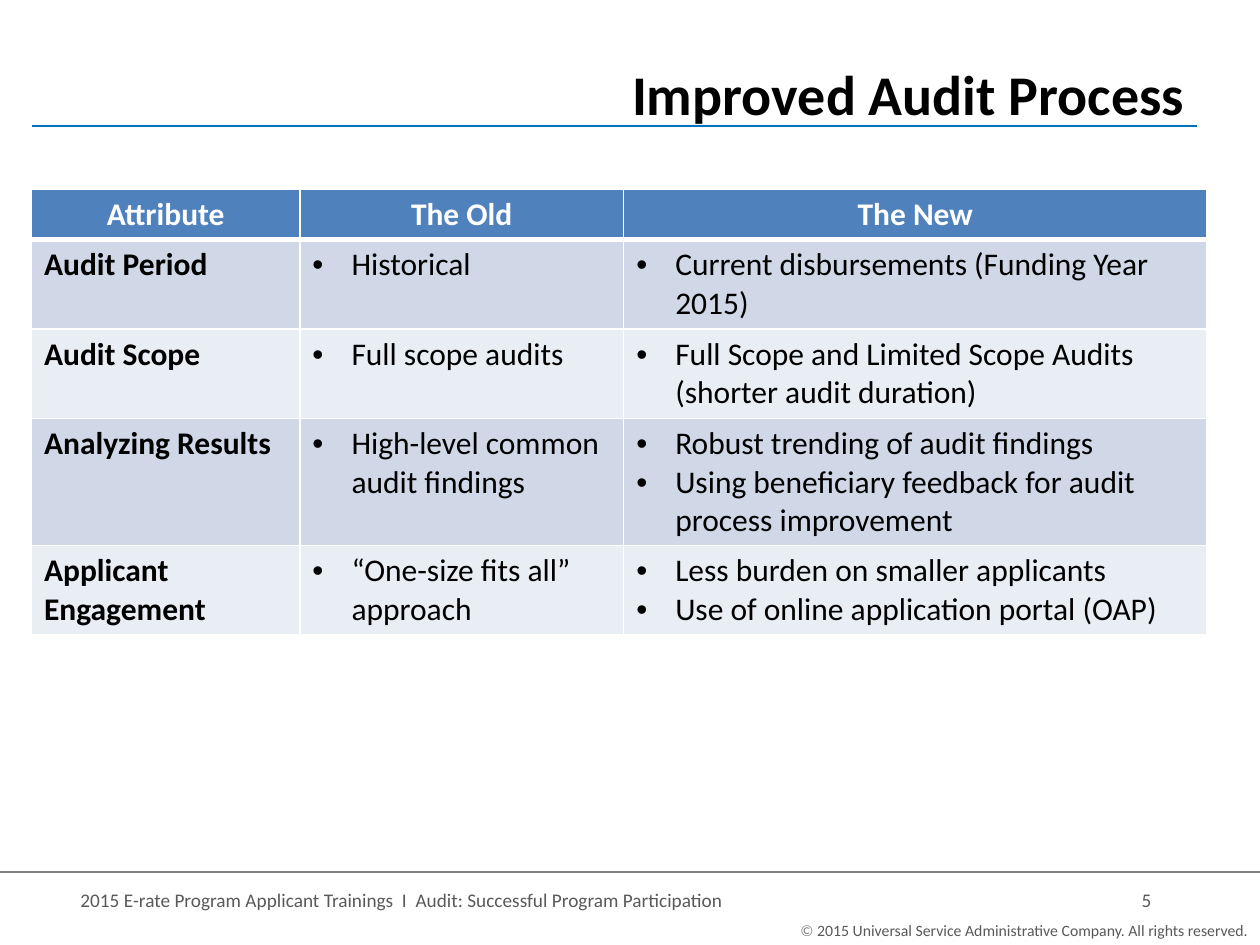
import pptx
import pptx.dml.color
import pptx.enum.shapes
import pptx.enum.text
import pptx.oxml
import pptx.oxml.ns
import pptx.util

RGBColor = pptx.dml.color.RGBColor
ALIGN = pptx.enum.text.PP_ALIGN
BLACK = RGBColor(0x00, 0x00, 0x00)
WHITE = RGBColor(0xFF, 0xFF, 0xFF)
GRAY = RGBColor(0x80, 0x80, 0x80)
DARK_GRAY = RGBColor(0x59, 0x59, 0x59)
RULE_BLUE = RGBColor(0x00, 0x70, 0xC0)
HEADER_BLUE = RGBColor(0x4F, 0x81, 0xBD)
BANDS = (RGBColor(0xD0, 0xD8, 0xE8), RGBColor(0xE9, 0xED, 0xF4))

HEADINGS = ("Attribute", "The Old", "The New")
COMPARISON = (
    ("Audit Period", ["Historical"], ["Current disbursements (Funding Year 2015)"]),
    ("Audit Scope", ["Full scope audits"],
     ["Full Scope and Limited Scope Audits (shorter audit duration)"]),
    ("Analyzing Results", ["High-level common audit findings"],
     ["Robust trending of audit findings",
      "Using beneficiary feedback for audit process improvement"]),
    ("Applicant Engagement", ["“One-size fits all” approach"],
     ["Less burden on smaller applicants",
      "Use of online application portal (OAP)"]),
)
COLUMN_WIDTHS = (8.52, 10.28, 18.52)
ROW_HEIGHTS = (1.6, 2.84, 2.84, 4.04, 2.84)


class SlideBuilder:
    """Draws styled elements on one slide, measured on a 40 by 30 grid."""

    font_name = "Calibri"
    columns, rows = 40, 30

    def __init__(self, presentation):
        self.column = presentation.slide_width / self.columns
        self.row = presentation.slide_height / self.rows
        self.slide = presentation.slides.add_slide(presentation.slide_layouts[6])

    def across(self, count):
        return pptx.util.Emu(round(count * self.column))

    def down(self, count):
        return pptx.util.Emu(round(count * self.row))

    def box(self, left, top, width, height):
        return self.across(left), self.down(top), self.across(width), self.down(height)

    def add_run(self, paragraph, text, size, color, bold=False):
        run = paragraph.add_run()
        run.text = text
        run.font.name = self.font_name
        run.font.size = pptx.util.Pt(size)
        run.font.bold = bold
        run.font.color.rgb = color

    def add_text(self, place, runs, size, align=ALIGN.LEFT, bold=False, tab=None):
        frame = self.slide.shapes.add_textbox(*self.box(*place)).text_frame
        frame.word_wrap = True
        paragraph = frame.paragraphs[0]
        paragraph.alignment = align
        if tab is not None:
            properties = paragraph._p.get_or_add_pPr()
            tabs = pptx.oxml.parse_xml(
                f'<a:tabLst {pptx.oxml.ns.nsdecls("a")}>'
                f'<a:tab pos="{self.across(tab)}" algn="r"/></a:tabLst>')
            properties.append(tabs)
        for text, color in runs:
            self.add_run(paragraph, text, size, color, bold)

    def add_rule(self, left, right, top, color, width):
        rule = self.slide.shapes.add_connector(
            pptx.enum.shapes.MSO_CONNECTOR.STRAIGHT,
            self.across(left), self.down(top), self.across(right), self.down(top))
        rule.line.color.rgb = color
        rule.line.width = pptx.util.Pt(width)
        rule._element.spPr.append(pptx.oxml.parse_xml(
            f'<a:effectLst {pptx.oxml.ns.nsdecls("a")}/>'))

    def add_bullet(self, paragraph):
        properties = paragraph._p.get_or_add_pPr()
        indent = pptx.util.Inches(0.31)
        properties.set("marL", str(indent))
        properties.set("indent", str(-indent))
        for content in ('buFont {} typeface="Arial"', 'buChar {} char="•"'):
            element = content.format(pptx.oxml.ns.nsdecls("a"))
            properties.append(pptx.oxml.parse_xml(f"<a:{element}/>"))

    def fill_cell(self, cell, lines, fill, color, align=ALIGN.LEFT, bold=False,
                  bullets=False, top=1, bottom=1):
        properties = cell._tc.get_or_add_tcPr()
        for side, width in (("L", 1), ("R", 1), ("T", top), ("B", bottom)):
            properties.append(pptx.oxml.parse_xml(
                f'<a:ln{side} {pptx.oxml.ns.nsdecls("a")} w="{pptx.util.Pt(width)}">'
                f'<a:solidFill><a:srgbClr val="{WHITE}"/></a:solidFill></a:ln{side}>'))
        cell.fill.solid()
        cell.fill.fore_color.rgb = fill
        frame = cell.text_frame
        for index, line in enumerate(lines):
            paragraph = frame.add_paragraph() if index else frame.paragraphs[0]
            paragraph.alignment = align
            if bullets:
                self.add_bullet(paragraph)
            self.add_run(paragraph, line, 18, color, bold)

    def add_comparison(self, left, top, headings, records, widths, heights):
        table = self.slide.shapes.add_table(
            len(heights), len(widths),
            *self.box(left, top, sum(widths), sum(heights))).table
        table.horz_banding = False
        for column, width in zip(table.columns, widths):
            column.width = self.across(width)
        for row, height in zip(table.rows, heights):
            row.height = self.down(height)
        for index, heading in enumerate(headings):
            self.fill_cell(table.cell(0, index), [heading], HEADER_BLUE, WHITE,
                           ALIGN.CENTER, bold=True, bottom=3)
        for number, (attribute, *details) in enumerate(records, start=1):
            band = BANDS[(number - 1) % len(BANDS)]
            edge = 3 if number == 1 else 1
            self.fill_cell(table.cell(number, 0), [attribute], band, BLACK,
                           bold=True, top=edge)
            for index, lines in enumerate(details, start=1):
                self.fill_cell(table.cell(number, index), lines, band, BLACK,
                               bullets=True, top=edge)


def main():
    presentation = pptx.Presentation()
    presentation.slide_width = pptx.util.Inches(10)
    presentation.slide_height = pptx.util.Inches(7.5)
    builder = SlideBuilder(presentation)
    builder.add_text(
        (4.16, 29.04, 35.84, 1),
        [("© ", GRAY),
         ("2015 Universal Service Administrative Company. All rights reserved.",
          DARK_GRAY)],
        9, ALIGN.RIGHT)
    builder.add_rule(1, 38, 4, RULE_BLUE, 1.25)
    builder.add_rule(0, 40, 27.68, GRAY, 0.75)
    builder.add_text(
        (2.16, 28, 35.84, 1.36),
        [("2015 E-rate Program Applicant Trainings  I  "
          "Audit: Successful Program Participation\t5", DARK_GRAY)],
        11, tab=34)
    builder.add_text((11, 1.68, 27, 2.32), [("Improved Audit Process", BLACK)],
                     32, ALIGN.RIGHT, bold=True)
    builder.add_comparison(1, 6, HEADINGS, COMPARISON, COLUMN_WIDTHS, ROW_HEIGHTS)
    presentation.save("out.pptx")


if __name__ == "__main__":
    main()
